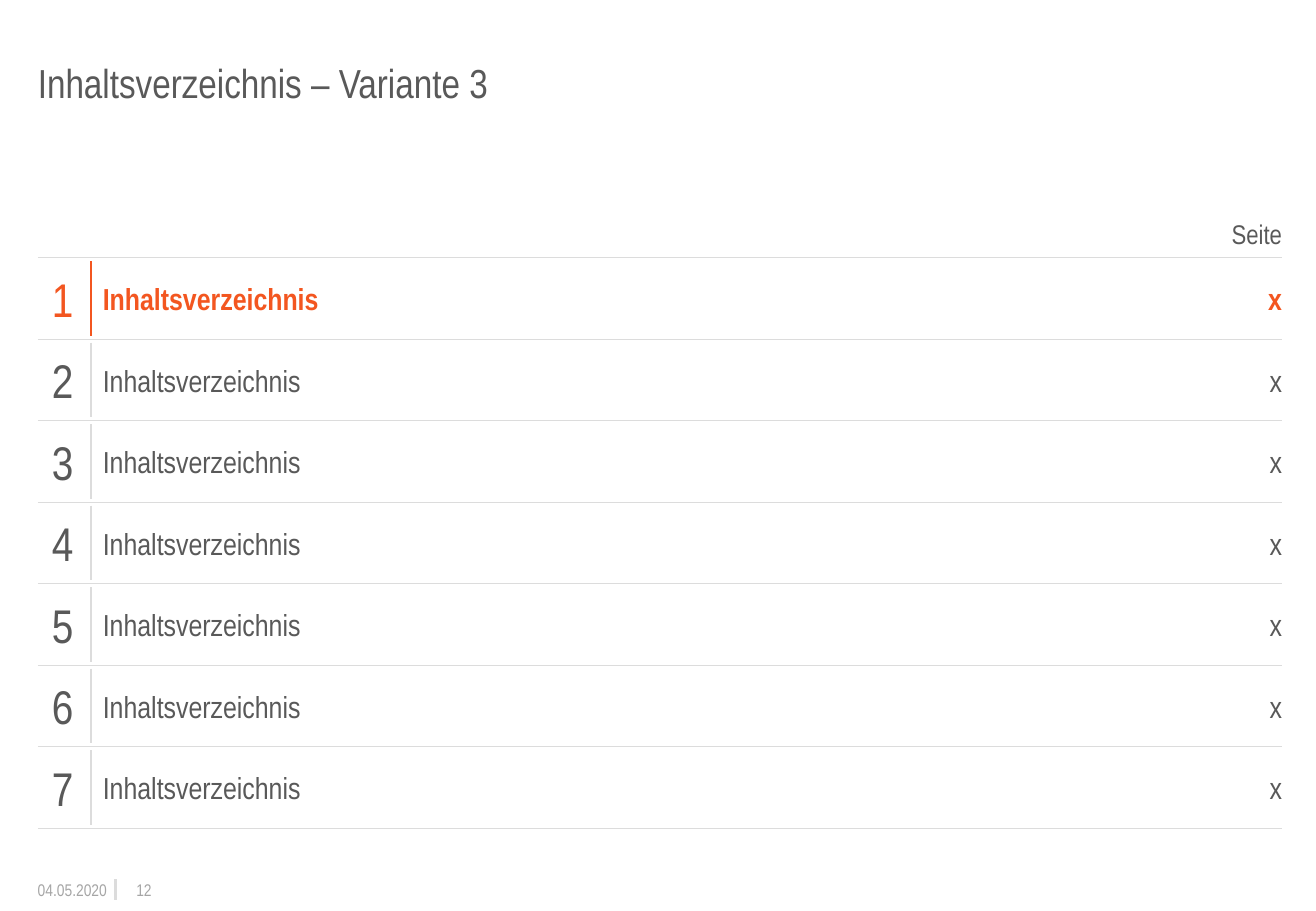
from pptx import Presentation
from pptx.dml.color import RGBColor
from pptx.enum.shapes import MSO_CONNECTOR
from pptx.enum.text import MSO_ANCHOR, MSO_AUTO_SIZE, PP_ALIGN
from pptx.oxml.ns import qn
from pptx.util import Cm, Pt
from lxml import etree

STRAIGHT = MSO_CONNECTOR.STRAIGHT
TOP, MIDDLE = MSO_ANCHOR.TOP, MSO_ANCHOR.MIDDLE
LEFT, CENTER, RIGHT = PP_ALIGN.LEFT, PP_ALIGN.CENTER, PP_ALIGN.RIGHT
NO_FIT = MSO_AUTO_SIZE.NONE

FONT = "Arial Narrow"
GRAY, ORANGE, RULE, FOOTER = "595959", "F35620", "DCDCDC", "A5A5A5"
MARGIN, RIGHT_EDGE = 0.79, 26.8
DIVIDER = 1.9
LIST_TOP, LIST_BOTTOM = 5.39, 17.32
ROW_GAP = 0.07
FOOTER_TOP, FOOTER_HEIGHT = 18.39, 0.43
ENTRIES = [("Inhaltsverzeichnis", "x")] * 7
ACTIVE = 1


def color(value):
    """Return the colour for a hex string."""
    return RGBColor.from_string(value)


def apply(target, values):
    """Set each named value as an attribute of the target."""
    for name, value in values.items():
        setattr(target, name, value)


class ContentsSlide:
    """Draws the elements of a contents slide in one style."""

    def __init__(self, presentation):
        """Add a slide with a title."""
        self.slide = presentation.slides.add_slide(presentation.slide_layouts[5])

    def fill_text(self, shape, text, size, tint=GRAY, bold=False, align=LEFT,
                  anchor=MIDDLE, insets=(0, 0, 0, 0), wrap=True, spacing=1.0):
        """Fill a shape with one formatted paragraph."""
        left, top, right, bottom = map(Cm, insets)
        frame = shape.text_frame
        apply(frame, {"text": text, "word_wrap": wrap, "auto_size": NO_FIT,
                      "vertical_anchor": anchor, "margin_left": left,
                      "margin_top": top, "margin_right": right,
                      "margin_bottom": bottom})
        paragraph = frame.paragraphs[0]
        apply(paragraph, {"alignment": align, "line_spacing": spacing,
                          "space_before": Pt(0)})
        apply(paragraph.font, {"name": FONT, "size": Pt(size), "bold": bold})
        paragraph.font.color.rgb = color(tint)

    def title(self, text, left, top, width, height):
        """Place and format the title placeholder."""
        shape = self.slide.shapes.title
        apply(shape, {"left": Cm(left), "top": Cm(top),
                      "width": Cm(width), "height": Cm(height)})
        self.fill_text(shape, text, 24, anchor=TOP, insets=(0, 0, 0, 0.3), spacing=0.9)

    def text(self, text, left, top, width, height, size, **style):
        """Add a text box."""
        shape = self.slide.shapes.add_textbox(Cm(left), Cm(top), Cm(width), Cm(height))
        self.fill_text(shape, text, size, **style)

    def line(self, left, top, right, bottom, weight, tint=RULE):
        """Add a straight line."""
        connector = self.slide.shapes.add_connector(
            STRAIGHT, Cm(left), Cm(top), Cm(right), Cm(bottom))
        connector.line.width = Pt(weight)
        connector.line.color.rgb = color(tint)
        etree.SubElement(connector._element.spPr, qn("a:effectLst"))

    def rule(self, top):
        """Add a horizontal rule across the list."""
        self.line(MARGIN, top, RIGHT_EDGE, top, 0.5)

    def entry(self, number, label, page, top, height, active):
        """Add one row of the list."""
        tint = ORANGE if active else GRAY
        padding = (0.25,) * 4
        self.text(str(number), MARGIN, top, 1.04, height, 28,
                  tint=tint, align=CENTER, insets=padding)
        self.text(label, DIVIDER, top, 22.76, height, 18,
                  tint=tint, bold=active, insets=padding)
        self.text(page, RIGHT_EDGE - 2.04, top, 2.04, height, 18, tint=tint,
                  bold=active, align=RIGHT, insets=(0, 0.18, 0, 0.18))
        self.line(DIVIDER, top, DIVIDER, top + height, 1.5, tint if active else RULE)

    def footer(self, date, page):
        """Add the date, the separator and the page number."""
        style = {"tint": FOOTER, "wrap": False}
        self.text(date, MARGIN, FOOTER_TOP, 1.45, FOOTER_HEIGHT, 10, **style)
        self.line(2.41, FOOTER_TOP, 2.41, FOOTER_TOP + FOOTER_HEIGHT, 2)
        self.text(page, 2.59, FOOTER_TOP, 0.58, FOOTER_HEIGHT, 10, align=RIGHT, **style)


def main():
    """Build and save the presentation."""
    presentation = Presentation()
    apply(presentation, {"slide_width": Cm(27.51), "slide_height": Cm(19.05)})
    contents = ContentsSlide(presentation)
    contents.title("Inhaltsverzeichnis – Variante 3", MARGIN, 1.32, 26.01, 1.85)
    contents.text("Seite", RIGHT_EDGE - 1.07, 4.55, 1.07, 0.69, 16,
                  align=RIGHT, anchor=TOP, wrap=False)
    pitch = (LIST_BOTTOM - LIST_TOP) / len(ENTRIES)
    contents.rule(LIST_TOP)
    for number, (label, page) in enumerate(ENTRIES, 1):
        bottom = LIST_TOP + number * pitch
        contents.entry(number, label, page, bottom - pitch + ROW_GAP,
                       pitch - 2 * ROW_GAP, number == ACTIVE)
        contents.rule(bottom)
    contents.footer("04.05.2020", "12")
    presentation.save("out.pptx")


if __name__ == "__main__":
    main()
